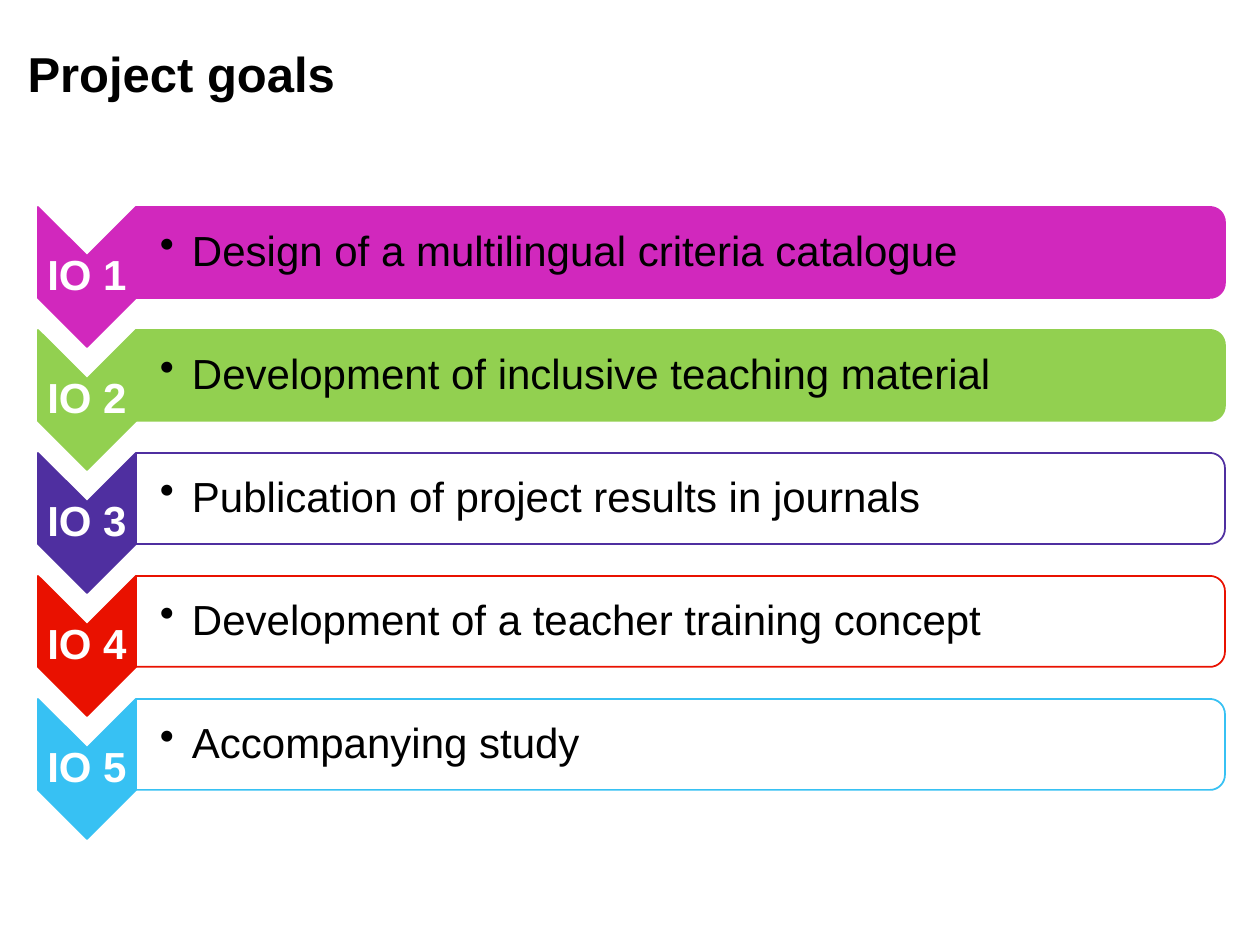
from math import cos, pi, sin

from lxml.etree import SubElement
from pptx import Presentation
from pptx.dml.color import RGBColor
from pptx.enum.text import MSO_ANCHOR, PP_ALIGN
from pptx.oxml.ns import qn
from pptx.util import Inches, Pt

PX = Inches(1) // 126
BLACK = RGBColor(0x00, 0x00, 0x00)
WHITE = RGBColor(0xFF, 0xFF, 0xFF)
MAGENTA = RGBColor(0xD1, 0x28, 0xBD)
GREEN = RGBColor(0x92, 0xD0, 0x50)
PURPLE = RGBColor(0x4F, 0x2F, 0xA0)
RED = RGBColor(0xE9, 0x11, 0x00)
BLUE = RGBColor(0x37, 0xC1, 0xF3)

LEFT, TOP, PITCH = 38, 207, 123
TAG_WIDTH, BAR_HEIGHT, POINT_DEPTH = 98, 91, 49
BAR_LEFT, BAR_RIGHT, RADIUS = LEFT + TAG_WIDTH, 1225, 15
BULLET_INDENT = 32

GOALS = [
    ("Design of a multilingual criteria catalogue", MAGENTA, True),
    ("Development of inclusive teaching material", GREEN, True),
    ("Publication of project results in journals", PURPLE, False),
    ("Development of a teacher training concept", RED, False),
    ("Accompanying study", BLUE, False),
]


def write(shape, text, size=24, color=BLACK, bold=False, align=PP_ALIGN.LEFT,
          insets=None, bullet=False):
    frame = shape.text_frame
    frame.word_wrap = True
    frame.vertical_anchor = MSO_ANCHOR.MIDDLE
    if insets:
        (frame.margin_left, frame.margin_top,
         frame.margin_right, frame.margin_bottom) = [n * PX for n in insets]
    paragraph = frame.paragraphs[0]
    paragraph.alignment = align
    paragraph.line_spacing = 0.9
    if bullet:
        paragraph.level = 1
        properties = paragraph._p.get_or_add_pPr()
        properties.set("marL", str(BULLET_INDENT * PX))
        properties.set("indent", str(-BULLET_INDENT * PX))
        SubElement(properties, qn("a:buChar")).set("char", "•")
    run = paragraph.add_run()
    run.text = text
    run.font.name = "Arial"
    run.font.size = Pt(size)
    run.font.bold = bold
    run.font.color.rgb = color


def add_outline(points, fill, line):
    corners = [(x * PX, y * PX) for x, y in points]
    builder = slide.shapes.build_freeform(*corners[0])
    builder.add_line_segments(corners[1:], close=True)
    shape = builder.convert_to_shape()
    shape.shadow.inherit = False
    shape.fill.solid()
    shape.fill.fore_color.rgb = fill
    shape.line.color.rgb = line
    shape.line.width = Pt(1)
    return shape


presentation = Presentation()
presentation.slide_width = Inches(10)
presentation.slide_height = Inches(7.5)
slide = presentation.slides.add_slide(presentation.slide_layouts[5])

heading = slide.shapes.title
heading.left, heading.top, heading.width, heading.height = [
    n * PX for n in (15, 43, 993, 68)]
write(heading, "Project goals", size=28, bold=True)

for index, (goal, color, filled) in enumerate(GOALS):
    top = TOP + index * PITCH
    bottom = top + BAR_HEIGHT
    middle = LEFT + TAG_WIDTH / 2

    tag = add_outline([
        (BAR_LEFT, top), (BAR_LEFT, bottom), (middle, bottom + POINT_DEPTH),
        (LEFT, bottom), (LEFT, top), (middle, top + POINT_DEPTH),
    ], color, color)
    write(tag, f"IO {index + 1}", color=WHITE, bold=True,
          align=PP_ALIGN.CENTER, insets=(2, 50, 2, 50))

    angles = [step * pi / 16 for step in range(9)]
    upper = [(BAR_RIGHT - RADIUS + RADIUS * sin(a),
              top + RADIUS - RADIUS * cos(a)) for a in angles]
    lower = [(x, top + bottom - y) for x, y in reversed(upper)]
    bar = add_outline([(BAR_LEFT, top), *upper, *lower, (BAR_LEFT, bottom)],
                      color if filled else WHITE, color)
    if not filled:
        tint = bar.fill._xPr.find(qn("a:solidFill"))[0]
        SubElement(tint, qn("a:alpha")).set("val", "90000")
    write(bar, goal, insets=(24, 6, 6, 6), bullet=True)

presentation.save("out.pptx")
